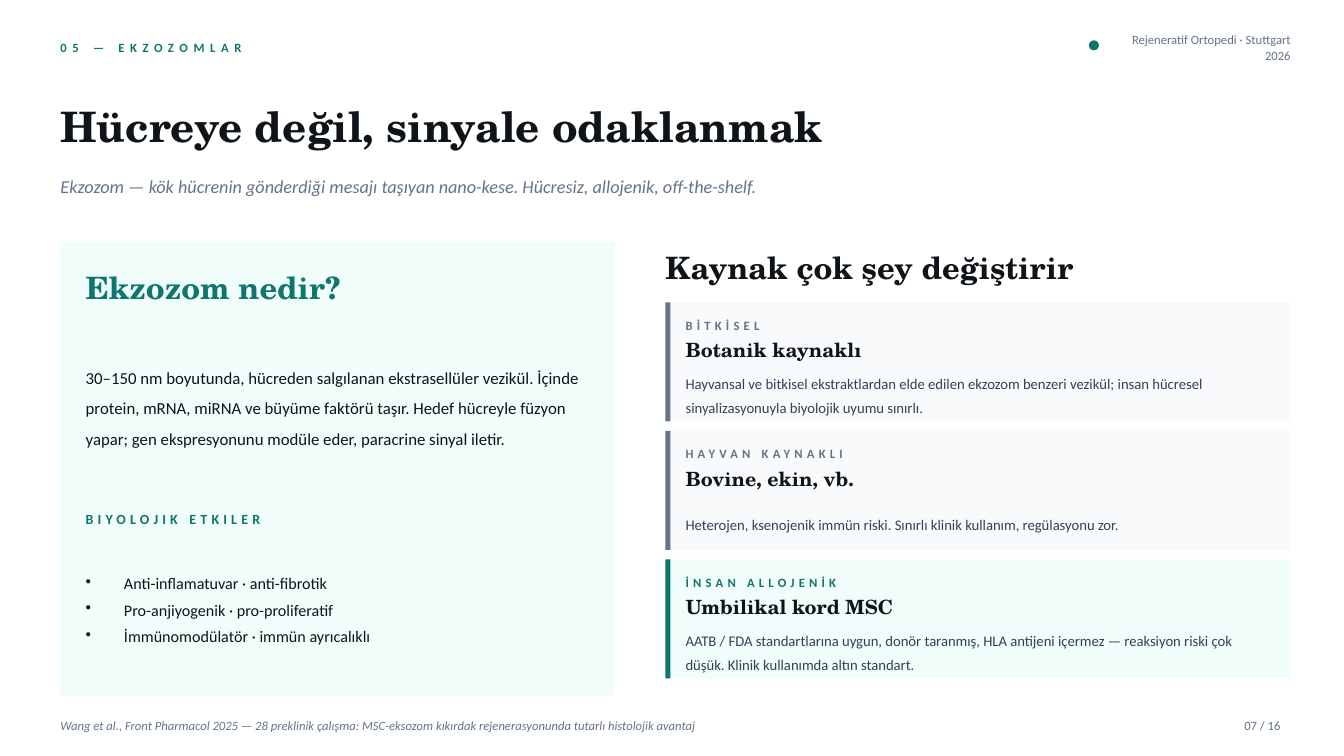
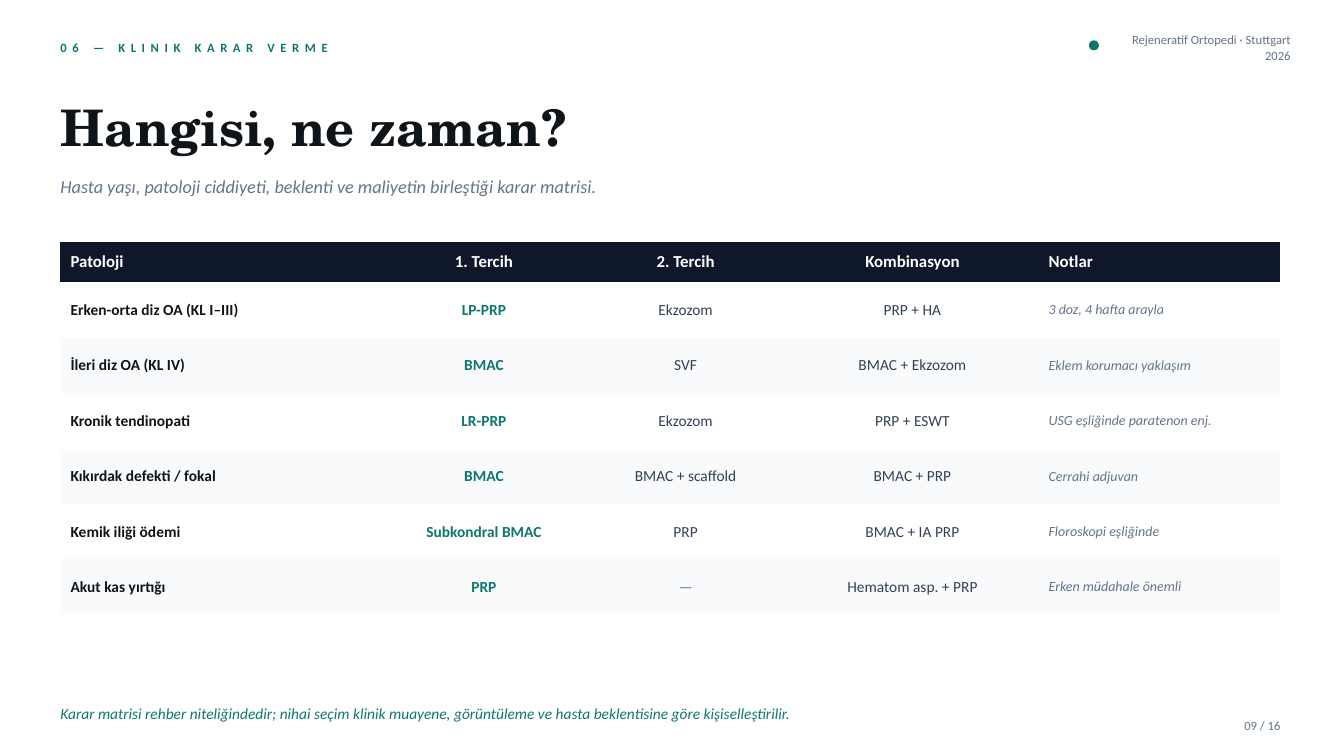
from pptx import Presentation
from pptx import util as u
from pptx.dml.color import RGBColor
from pptx.enum import shapes, text
from pptx.oxml.ns import qn
from lxml import etree

SANS, SERIF = "Calibri", "TeX Gyre Schola"
TEAL, MINT, INK, NAVY = "0F766E", "F0FDFA", "0F1419", "0F172A"
GRAY, SLATE, PALE, WHITE = "64748B", "334155", "F8FAFC", "FFFFFF"
LEFT, CENTER, RIGHT = text.PP_ALIGN.LEFT, text.PP_ALIGN.CENTER, text.PP_ALIGN.RIGHT
RECT, OVAL = shapes.MSO_SHAPE.RECTANGLE, shapes.MSO_SHAPE.OVAL
MIDDLE = text.MSO_ANCHOR.MIDDLE
NO_GRID = "{2D5ABB26-0587-4C30-8999-92F81FD0307C}"


def rgb(code):
    return RGBColor.from_string(code)


def inches(*sizes):
    return [u.Inches(size) for size in sizes]


# Text and shape helpers
def add_run(para, words, size, color, face=SANS, bold=False, italic=False, gap=0):
    run = para.add_run()
    run.text = words
    font = run.font
    font.size, font.name = u.Pt(size), face
    font.bold, font.italic = bold, italic
    font.color.rgb = rgb(color)
    if gap:
        run._r.get_or_add_rPr().set("spc", str(gap * 100))


def add_text(slide, box, lines, size, color, align=LEFT, space=None,
             after=None, bullet=False, **look):
    frame = slide.shapes.add_textbox(*inches(*box)).text_frame
    frame.word_wrap = True
    frame.vertical_anchor = MIDDLE
    frame.margin_left = frame.margin_right = 0
    frame.margin_top = frame.margin_bottom = 0
    lines = [lines] if isinstance(lines, str) else lines
    for i, words in enumerate(lines):
        para = frame.add_paragraph() if i else frame.paragraphs[0]
        para.alignment = align
        if space:
            para.line_spacing = space
        if after:
            para.space_after = u.Pt(after)
        if bullet:
            props = para._p.get_or_add_pPr()
            props.set("marL", str(u.Inches(0.38)))
            props.set("indent", str(u.Inches(-0.38)))
            etree.SubElement(props, qn("a:buChar")).set("char", "•")
        add_run(para, words, size, color, **look)


def add_block(slide, box, color, kind=RECT):
    block = slide.shapes.add_shape(kind, *inches(*box))
    block.shadow.inherit = False
    block.fill.solid()
    block.fill.fore_color.rgb = rgb(color)
    block.line.fill.background()


# Shared frame: section label, event, page number, title, subtitle
def add_page(deck, label, page, title, size, sub):
    slide = deck.slides.add_slide(deck.slide_layouts[6])
    slide.background.fill.solid()
    slide.background.fill.fore_color.rgb = rgb(WHITE)
    add_text(slide, (0.6, 0.32, 8, 0.3), label, 9, TEAL, bold=True, gap=4)
    add_block(slide, (10.8, 0.4, 0.1, 0.1), TEAL, OVAL)
    add_text(slide, (10.95, 0.32, 1.85, 0.3),
             "Rejeneratif Ortopedi · Stuttgart 2026", 9, GRAY, RIGHT)
    add_text(slide, (11.8, 7.05, 0.9, 0.3), f"{page} / 16", 9, GRAY, RIGHT)
    add_text(slide, (0.6, 0.9, 12, 0.7), title, size, INK, face=SERIF, bold=True)
    add_text(slide, (0.6, 1.65, 12, 0.4), sub, 13, GRAY, italic=True)
    return slide


# Left panel: definition and effects
def add_panel(slide, x, y, wide, high):
    add_block(slide, (x, y, wide, high), MINT)
    x, inner = x + 0.25, wide - 0.5
    add_text(slide, (x, y + 0.2, inner, 0.5), "Ekzozom nedir?", 22, TEAL,
             face=SERIF, bold=True)
    add_text(slide, (x, y + 0.75, inner, 1.7),
             "30–150 nm boyutunda, hücreden salgılanan ekstrasellüler vezikül. "
             "İçinde protein, mRNA, miRNA ve büyüme faktörü taşır. Hedef hücreyle "
             "füzyon yapar; gen ekspresyonunu modüle eder, paracrine sinyal iletir.",
             12, INK, space=1.5)
    add_text(slide, (x, y + 2.6, inner, 0.3), "BIYOLOJIK ETKILER", 10, TEAL,
             bold=True, gap=3)
    add_text(slide, (x, y + 2.95, inner, 1.4),
             ["Anti-inflamatuvar · anti-fibrotik",
              "Pro-anjiyogenik · pro-proliferatif",
              "İmmünomodülatör · immün ayrıcalıklı"],
             11.5, INK, after=5, bullet=True)


# Source card: accent bar, tag, name, description
def add_card(slide, x, y, wide, high, tag, name, about, accent, back):
    add_block(slide, (x, y, wide, high), back)
    add_block(slide, (x, y, 0.05, high), accent)
    x, inner = x + 0.2, wide - 0.4
    add_text(slide, (x, y + 0.1, 2, 0.25), tag, 9, accent, bold=True, gap=3)
    add_text(slide, (x, y + 0.32, inner, 0.3), name, 14, INK, face=SERIF, bold=True)
    add_text(slide, (x, y + 0.62, inner, 0.55), about, 10.5, SLATE, space=1.35)


CARDS = [
    ("BİTKİSEL", "Botanik kaynaklı",
     "Hayvansal ve bitkisel ekstraktlardan elde edilen ekzozom benzeri vezikül; "
     "insan hücresel sinyalizasyonuyla biyolojik uyumu sınırlı.", GRAY, PALE),
    ("HAYVAN KAYNAKLI", "Bovine, ekin, vb.",
     "Heterojen, ksenojenik immün riski. Sınırlı klinik kullanım, "
     "regülasyonu zor.", GRAY, PALE),
    ("İNSAN ALLOJENİK", "Umbilikal kord MSC",
     "AATB / FDA standartlarına uygun, donör taranmış, HLA antijeni içermez — "
     "reaksiyon riski çok düşük. Klinik kullanımda altın standart.", TEAL, MINT),
]


def add_cards(slide, x, y, wide):
    add_text(slide, (x, y, wide, 0.5), "Kaynak çok şey değiştirir", 22, INK,
             face=SERIF, bold=True)
    high, step = 1.18, 1.275
    for i, card in enumerate(CARDS):
        add_card(slide, x, y + 0.6 + i * step, wide, high, *card)


# Decision table
ROWS = [
    ("Patoloji", "1. Tercih", "2. Tercih", "Kombinasyon", "Notlar"),
    ("Erken-orta diz OA (KL I–III)", "LP-PRP", "Ekzozom", "PRP + HA",
     "3 doz, 4 hafta arayla"),
    ("İleri diz OA (KL IV)", "BMAC", "SVF", "BMAC + Ekzozom",
     "Eklem korumacı yaklaşım"),
    ("Kronik tendinopati", "LR-PRP", "Ekzozom", "PRP + ESWT",
     "USG eşliğinde paratenon enj."),
    ("Kıkırdak defekti / fokal", "BMAC", "BMAC + scaffold", "BMAC + PRP",
     "Cerrahi adjuvan"),
    ("Kemik iliği ödemi", "Subkondral BMAC", "PRP", "BMAC + IA PRP",
     "Floroskopi eşliğinde"),
    ("Akut kas yırtığı", "PRP", "—", "Hematom asp. + PRP",
     "Erken müdahale önemli"),
]
WIDTHS = [3.2, 2, 2, 2.5, 2.4]
ALIGNS = [LEFT, CENTER, CENTER, CENTER, LEFT]
LOOKS = [
    dict(size=11, color=INK, bold=True),
    dict(size=11, color=TEAL, bold=True),
    dict(size=11, color=SLATE),
    dict(size=11, color=SLATE),
    dict(size=10, color=GRAY, italic=True),
]
HEAD = dict(size=12, color=WHITE, bold=True)


def add_matrix(slide, x, y):
    heights = [0.4] + [0.55] * (len(ROWS) - 1)
    frame = slide.shapes.add_table(len(ROWS), len(WIDTHS),
                                   *inches(x, y, sum(WIDTHS), sum(heights)))
    next(frame.element.iter(qn("a:tableStyleId"))).text = NO_GRID
    grid = frame.table
    for col, wide in zip(grid.columns, WIDTHS):
        col.width = u.Inches(wide)
    for r, row in enumerate(ROWS):
        grid.rows[r].height = u.Inches(heights[r])
        for c, words in enumerate(row):
            cell = grid.cell(r, c)
            cell.vertical_anchor = MIDDLE
            if r % 2:
                cell.fill.background()
            else:
                cell.fill.solid()
                cell.fill.fore_color.rgb = rgb(PALE if r else NAVY)
            look = dict(LOOKS[c] if r else HEAD)
            if words == "—":
                look["color"] = GRAY
            para = cell.text_frame.paragraphs[0]
            para.alignment = ALIGNS[c]
            add_run(para, words, **look)


# Slides
def add_exosomes(deck):
    slide = add_page(deck, "05 — EKZOZOMLAR", "07",
                     "Hücreye değil, sinyale odaklanmak", 30,
                     "Ekzozom — kök hücrenin gönderdiği mesajı taşıyan nano-kese. "
                     "Hücresiz, allojenik, off-the-shelf.")
    add_panel(slide, 0.6, 2.4, 5.5, 4.5)
    add_cards(slide, 6.6, 2.4, 6.2)
    add_text(slide, (0.6, 7.05, 12, 0.3),
             "Wang et al., Front Pharmacol 2025 — 28 preklinik çalışma: MSC-eksozom "
             "kıkırdak rejenerasyonunda tutarlı histolojik avantaj",
             9, GRAY, italic=True)


def add_choices(deck):
    slide = add_page(deck, "06 — KLINIK KARAR VERME", "09", "Hangisi, ne zaman?", 36,
                     "Hasta yaşı, patoloji ciddiyeti, beklenti ve maliyetin "
                     "birleştiği karar matrisi.")
    add_matrix(slide, 0.6, 2.4)
    add_text(slide, (0.6, 6.9, 12, 0.35),
             "Karar matrisi rehber niteliğindedir; nihai seçim klinik muayene, "
             "görüntüleme ve hasta beklentisine göre kişiselleştirilir.",
             11, TEAL, italic=True)


def main():
    deck = Presentation()
    deck.slide_width, deck.slide_height = inches(13.33, 7.5)
    add_exosomes(deck)
    add_choices(deck)
    deck.save("out.pptx")


if __name__ == "__main__":
    main()
